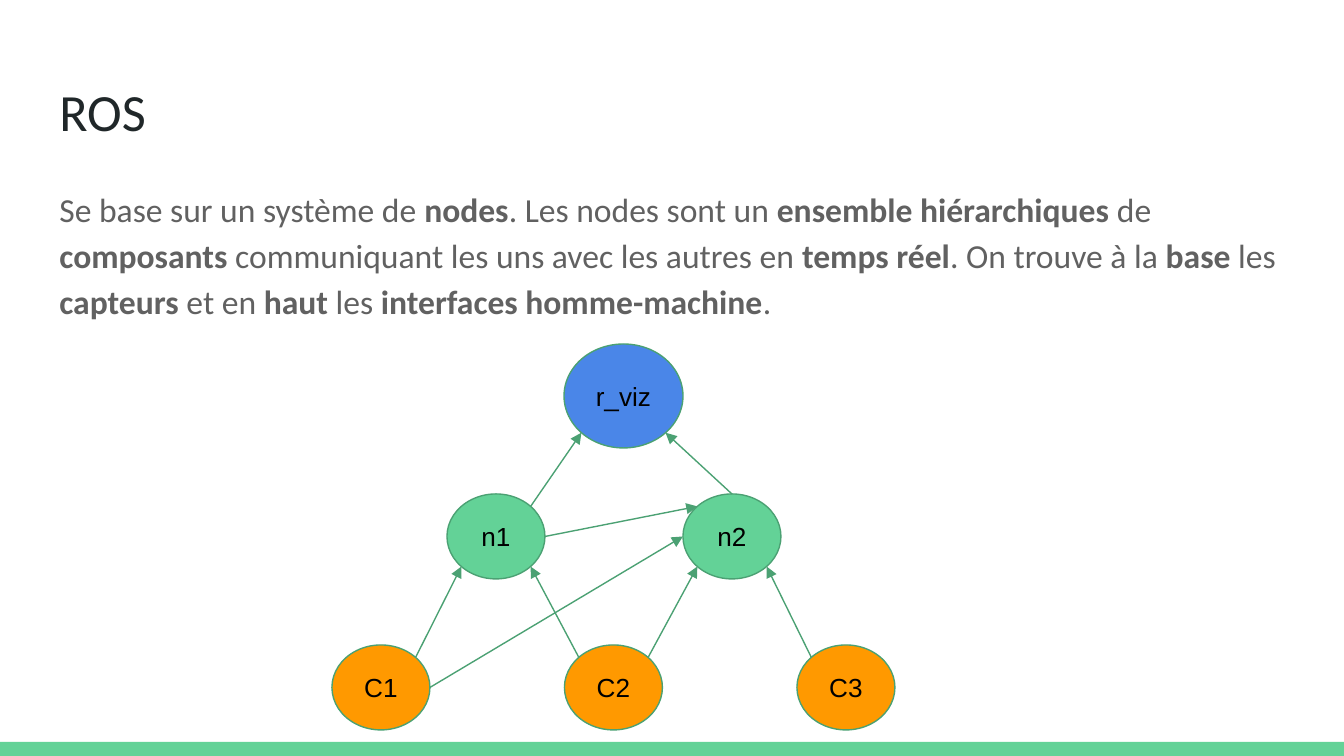
from math import sqrt

from lxml import etree
from pptx import Presentation
from pptx.dml.color import RGBColor
from pptx.enum.shapes import MSO_CONNECTOR, MSO_SHAPE
from pptx.enum.text import MSO_ANCHOR, MSO_AUTO_SIZE, PP_ALIGN
from pptx.oxml.ns import qn
from pptx.util import Inches, Pt

LINE = MSO_CONNECTOR.STRAIGHT
OVAL, RECT = MSO_SHAPE.OVAL, MSO_SHAPE.RECTANGLE
TOP, MIDDLE = MSO_ANCHOR.TOP, MSO_ANCHOR.MIDDLE
LEFT, CENTER = PP_ALIGN.LEFT, PP_ALIGN.CENTER
FIXED = MSO_AUTO_SIZE.NONE

GREEN = RGBColor(0x63, 0xD2, 0x97)
EDGE = RGBColor(0x4B, 0xA1, 0x73)
ORANGE = RGBColor(0xFF, 0x99, 0x00)
BLUE = RGBColor(0x4A, 0x86, 0xE8)
DARK = RGBColor(0x20, 0x27, 0x29)
GRAY = RGBColor(0x61, 0x61, 0x61)
BLACK = RGBColor(0, 0, 0)

# Content: the body alternates plain and bold runs
TITLE = "ROS"
BODY = [
    "Se base sur un système de ", "nodes",
    ". Les nodes sont un ", "ensemble hiérarchiques",
    " de ", "composants",
    " communiquant les uns avec les autres en ", "temps réel",
    ". On trouve à la ", "base", " les ", "capteurs",
    " et en", " haut", " les", " interfaces homme-machine", ".",
]
# Rows of nodes: names, left, top, step, width, height, fill
ROWS = [
    (["C1", "C2", "C3"], 332, 645, 232.5, 98, 85, ORANGE),
    (["n1", "n2"], 447, 494, 236, 98, 85, GREEN),
    (["r_viz"], 564, 344, 0, 119, 104, BLUE),
]
# Arrows: from node and side, to node and side
LINKS = [
    ("C1", "NE", "n1", "SW"), ("C2", "NW", "n1", "SE"),
    ("C3", "NW", "n2", "SE"), ("C1", "E", "n2", "W"),
    ("C2", "NE", "n2", "SW"), ("n1", "E", "n2", "NW"),
    ("n2", "N", "r_viz", "SE"), ("n1", "NE", "r_viz", "SW"),
]
SIDES = {"N": (0, -1), "S": (0, 1), "E": (1, 0), "W": (-1, 0)}
PAD = Inches(0.1)


def px(n):
    return round(n * 914400 / 134.4)


def write(par, text, font, size, color, bold=False):
    run = par.add_run()
    run.text = text
    run.font.name = font
    run.font.size = Pt(size)
    run.font.color.rgb = color
    run.font.bold = bold


def frame(shape, anchor, align):
    box = shape.text_frame
    box.word_wrap = True
    box.auto_size = FIXED
    box.vertical_anchor = anchor
    box.margin_left = box.margin_right = PAD
    box.margin_top = box.margin_bottom = PAD
    par = box.paragraphs[0]
    par.alignment = align
    return par


def place(shape, left, top, width, height):
    shape.left, shape.top = px(left), px(top)
    shape.width, shape.height = px(width), px(height)


def point(node, side):
    """Point on the rim of an oval, in a compass direction."""
    left, top, width, height = node
    reach = 2 * sqrt(len(side))
    dx = sum(SIDES[s][0] for s in side)
    dy = sum(SIDES[s][1] for s in side)
    return (px(left + width / 2 + dx * width / reach),
            px(top + height / 2 + dy * height / reach))


deck = Presentation()
deck.slide_width, deck.slide_height = px(1344), px(756)
slide = deck.slides.add_slide(deck.slide_layouts[1])
shapes = slide.shapes

# Bottom band
band = shapes.add_shape(RECT, 0, px(742), px(1344), px(14))
band.shadow.inherit = False
band.fill.solid()
band.fill.fore_color.rgb = GREEN
band.line.fill.background()

# Title
title = shapes.title
place(title, 46, 66, 1252, 85)
write(frame(title, TOP, LEFT), TITLE, "Calibri", 28, DARK)

# Body, without bullet
body = slide.placeholders[1]
place(body, 46, 169, 1252, 175)
par = frame(body, TOP, LEFT)
par.line_spacing = 1.15
par.space_before, par.space_after = Pt(0), Pt(16)
for i, text in enumerate(BODY):
    write(par, text, "Calibri", 18, GRAY, i % 2 == 1)
props = par._p.get_or_add_pPr()
props.set("marL", "0")
props.set("indent", "0")
etree.SubElement(props, qn("a:buNone"))

# Nodes
nodes = {}
for names, left, top, step, width, height, fill in ROWS:
    for i, name in enumerate(names):
        nodes[name] = (left + i * step, top, width, height)
        oval = shapes.add_shape(OVAL, *map(px, nodes[name]))
        oval.shadow.inherit = False
        oval.fill.solid()
        oval.fill.fore_color.rgb = fill
        oval.line.color.rgb = EDGE
        oval.line.width = Pt(0.75)
        write(frame(oval, MIDDLE, CENTER), name, "Arial", 14, BLACK)

# Arrows
for start, out, end, into in LINKS:
    link = shapes.add_connector(
        LINE, *point(nodes[start], out), *point(nodes[end], into))
    link.line.color.rgb = EDGE
    link.line.width = Pt(0.75)
    etree.SubElement(link.line._get_or_add_ln(), qn("a:tailEnd"), type="triangle")
    etree.SubElement(link._element.spPr, qn("a:effectLst"))

deck.save("out.pptx")
